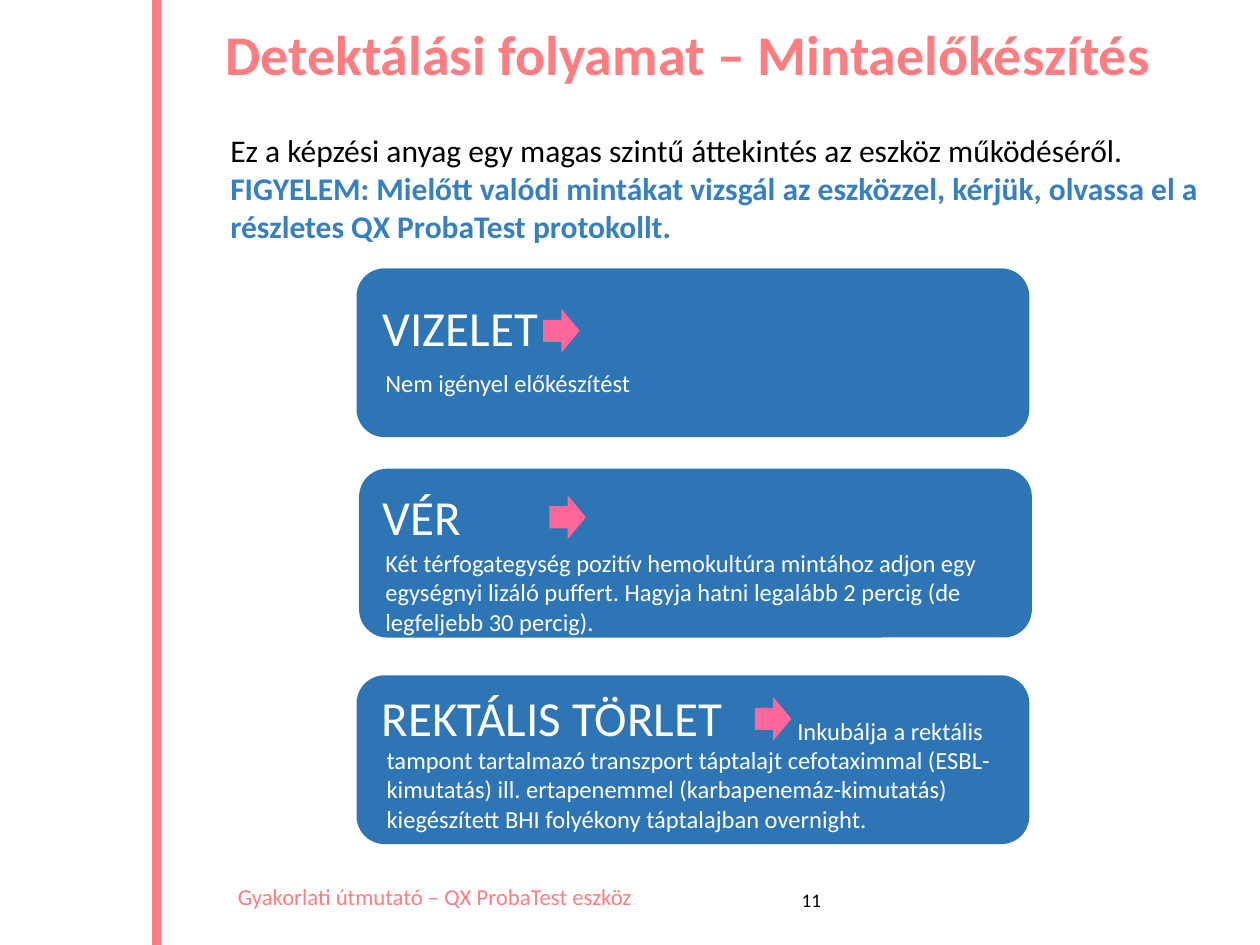
import pptx
import pptx.util
import pptx.dml.color
import pptx.enum.shapes
import pptx.enum.text
from lxml import etree

Inches, Pt = pptx.util.Inches, pptx.util.Pt
RGBColor = pptx.dml.color.RGBColor
MSO_SHAPE = pptx.enum.shapes.MSO_SHAPE
PP_ALIGN = pptx.enum.text.PP_ALIGN

CORAL = RGBColor(0xFF, 0x7C, 0x80)
BLUE = RGBColor(0x2E, 0x75, 0xB6)
NOTICE = RGBColor(0x35, 0x7F, 0xC2)
PINK = RGBColor(0xFF, 0x66, 0x99)
BLACK = RGBColor(0, 0, 0)
WHITE = RGBColor(0xFF, 0xFF, 0xFF)


class Deck:
    FONT = "Calibri"

    def __init__(self):
        self.prs = pptx.Presentation()
        self.prs.slide_width = Inches(10)
        self.prs.slide_height = Inches(7.5)
        self.s = self.prs.slides.add_slide(self.prs.slide_layouts[6])

    def text(self, x, y, w, h, text, size, color, bold=None, indent=0):
        """Add a wrapped text box and return its paragraph."""
        tf = self.s.shapes.add_textbox(
            Inches(x), Inches(y), Inches(w), Inches(h)).text_frame
        tf.word_wrap = True
        p = tf.paragraphs[0]
        if indent:
            pPr = p._p.get_or_add_pPr()
            pPr.set("marL", "0")
            pPr.set("indent", str(Inches(indent)))
        p.add_run().text = text
        p.font.name, p.font.size = self.FONT, Pt(size)
        p.font.color.rgb, p.font.bold = color, bold
        return p

    def shape(self, kind, x, y, w, h, color):
        sp = self.s.shapes.add_shape(
            kind, Inches(x), Inches(y), Inches(w), Inches(h))
        sp.shadow.inherit = False
        sp.fill.solid()
        sp.fill.fore_color.rgb = color
        sp.line.fill.background()
        return sp

    def arrow(self, x, y):
        self.shape(MSO_SHAPE.DOWN_ARROW, x, y, 0.35, 0.29, PINK).rotation = 270

    def line(self, x1, y1, x2, y2, color, width):
        c = self.s.shapes.add_connector(
            pptx.enum.shapes.MSO_CONNECTOR.STRAIGHT,
            Inches(x1), Inches(y1), Inches(x2), Inches(y2))
        c.line.color.rgb, c.line.width = color, Pt(width)
        etree.SubElement(c._element.spPr, pptx.oxml.ns.qn("a:effectLst"))


# Per sample: card position, heading box, arrow position, body box, body, indent
SAMPLES = [
    ((2.83, 2.13), "VIZELET", (2.94, 2.31, 2.49, 0.57), (4.28, 2.48),
     (2.96, 2.87, 4.78, 0.34), "Nem igényel előkészítést", 0),
    ((2.85, 3.72), "VÉR", (2.94, 3.81, 2.49, 0.57), (4.33, 3.96),
     (2.96, 4.3, 5.21, 0.81),
     "Két térfogategység pozitív hemokultúra mintához adjon egy egységnyi "
     "lizáló puffert. Hagyja hatni legalább 2 percig (de legfeljebb 30 "
     "percig).", 0),
    ((2.83, 5.36), "REKTÁLIS TÖRLET", (2.93, 5.41, 3.07, 0.57), (5.96, 5.56),
     (2.97, 5.63, 5.06, 1.04),
     "Inkubálja a rektális tampont tartalmazó transzport táptalajt "
     "cefotaximmal (ESBL-kimutatás) ill. ertapenemmel "
     "(karbapenemáz-kimutatás) kiegészített BHI folyékony táptalajban "
     "overnight.", 3.26),
]


def main():
    d = Deck()
    d.line(1.24, 7.5, 1.24, 0, CORAL, 5)
    d.text(1.79, 6.96, 3.5, 0.32,
           "Gyakorlati útmutató – QX ProbaTest eszköz", 13, CORAL)
    title = d.text(1.69, 0.17, 8.1, 0.66,
                   "Detektálási folyamat – Mintaelőkészítés", 32, CORAL, True)
    title.line_spacing = 0.9

    intro = d.text(1.73, 0.99, 8.06, 1.31,
                   "Ez a képzési anyag egy magas szintű áttekintés az eszköz "
                   "működéséről. ", 18, BLACK)
    r = intro.add_run()
    r.text = ("FIGYELEM: Mielőtt valódi mintákat vizsgál az eszközzel, "
              "kérjük, olvassa el a részletes QX ProbaTest protokollt.")
    r.font.bold, r.font.color.rgb = True, NOTICE

    for card, heading, heading_box, arrow, body_box, body, indent in SAMPLES:
        d.shape(MSO_SHAPE.ROUNDED_RECTANGLE, *card, 5.34, 1.34, BLUE)
        d.text(*heading_box, heading, 28, WHITE)
        d.arrow(*arrow)
        d.text(*body_box, body, 14, WHITE, indent=indent)

    d.text(6.22, 7, 0.44, 0.29, "11", 11, BLACK).alignment = PP_ALIGN.CENTER
    d.prs.save("out.pptx")


if __name__ == "__main__":
    main()
